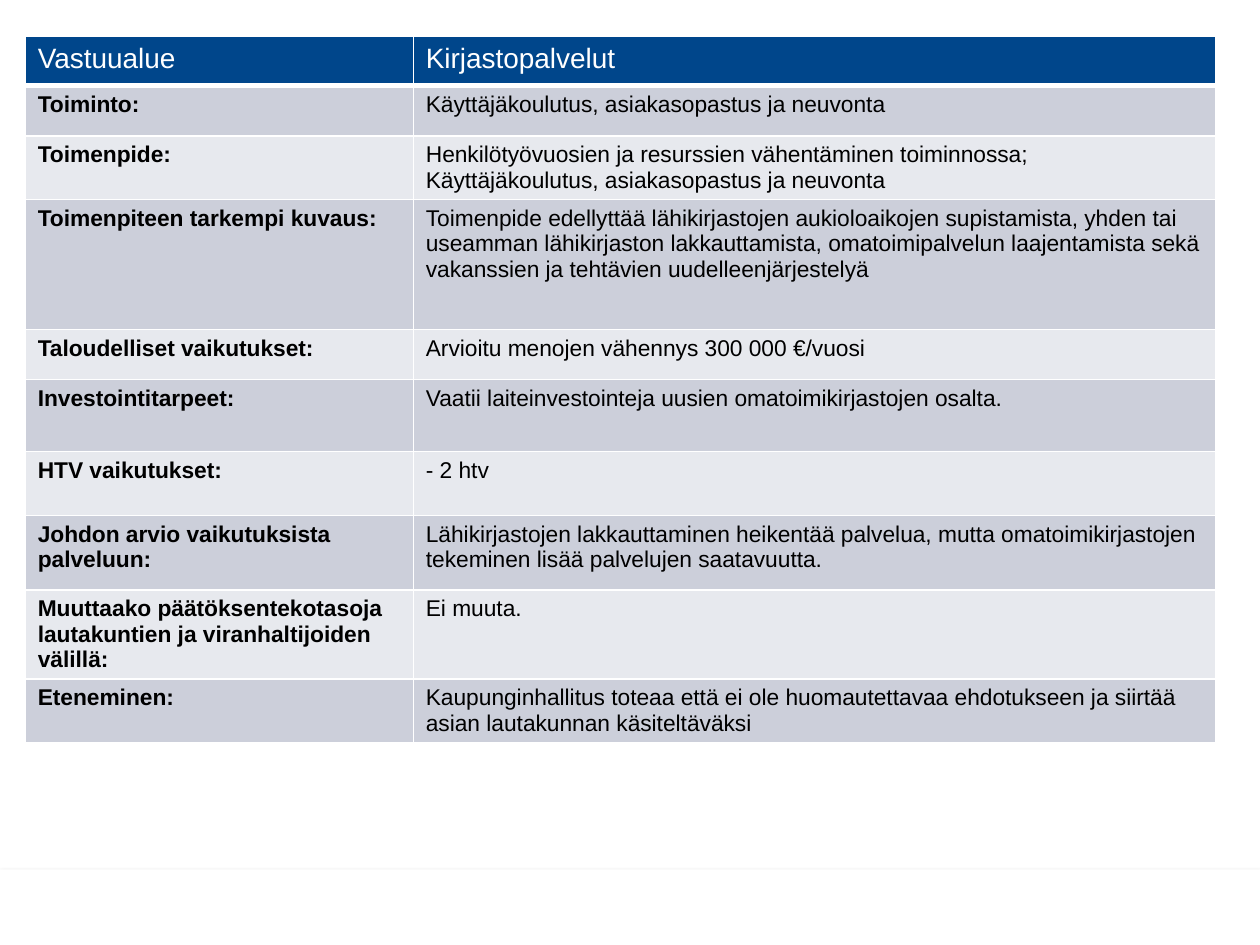
from lxml.etree import SubElement
from pptx import Presentation
from pptx.dml.color import RGBColor
from pptx.enum.shapes import MSO_SHAPE
from pptx.oxml.ns import qn
from pptx.util import Inches, Pt

HEADER = ("Vastuualue", "Kirjastopalvelut")
# Label, description, row height in inches
ROWS = [
    ("Toiminto:", "Käyttäjäkoulutus, asiakasopastus ja neuvonta", 0.4),
    ("Toimenpide:", "Henkilötyövuosien ja resurssien vähentäminen toiminnossa; "
     "Käyttäjäkoulutus, asiakasopastus ja neuvonta", 0.5),
    ("Toimenpiteen tarkempi kuvaus:",
     "Toimenpide edellyttää lähikirjastojen aukioloaikojen supistamista, yhden tai "
     "useamman lähikirjaston lakkauttamista, omatoimipalvelun laajentamista sekä "
     "vakanssien ja tehtävien uudelleenjärjestelyä", 1.03),
    ("Taloudelliset vaikutukset:", "Arvioitu menojen vähennys 300 000 €/vuosi", 0.4),
    ("Investointitarpeet:",
     "Vaatii laiteinvestointeja uusien omatoimikirjastojen osalta.", 0.57),
    ("HTV vaikutukset:", "- 2 htv", 0.51),
    ("Johdon arvio vaikutuksista palveluun:",
     "Lähikirjastojen lakkauttaminen heikentää palvelua, mutta omatoimikirjastojen "
     "tekeminen lisää palvelujen saatavuutta.", 0.59),
    ("Muuttaako päätöksentekotasoja lautakuntien ja viranhaltijoiden välillä:",
     "Ei muuta.", 0.7),
    ("Eteneminen:",
     "Kaupunginhallitus toteaa että ei ole huomautettavaa ehdotukseen ja siirtää "
     "asian lautakunnan käsiteltäväksi", 0.5),
]
COLUMN_WIDTHS = (3.08, 6.37)
HEADER_HEIGHT = 0.39
WHITE, BLACK, BLUE = "FFFFFF", "000000", "00468B"
BANDS = ("CCCFDA", "E7E9EE")


def paint(fill, color):
    fill.solid()
    fill.fore_color.rgb = RGBColor.from_string(color)


def add_borders(cell, bottom_width):
    properties = cell._tc.get_or_add_tcPr()
    widths = {"a:lnL": 1, "a:lnR": 1, "a:lnT": 1, "a:lnB": bottom_width}
    for index, (tag, width) in enumerate(widths.items()):
        line = SubElement(properties, qn(tag), w=str(Pt(width)))
        solid = SubElement(line, qn("a:solidFill"))
        SubElement(solid, qn("a:srgbClr"), val=WHITE)
        properties.insert(index, line)


def fill_cell(cell, text, size, color, background, bold=False, bottom_width=1):
    paint(cell.fill, background)
    add_borders(cell, bottom_width)
    span = cell.text_frame.paragraphs[0].add_run()
    span.text = text
    span.font.name = "Arial"
    span.font.size = Pt(size)
    span.font.bold = bold
    paint(span.font.fill, color)


deck = Presentation()
deck.slide_width, deck.slide_height = Inches(10), Inches(7.5)
page = deck.slides.add_slide(deck.slide_layouts[6])

# Footer band with a soft shadow
footer = page.shapes.add_shape(
    MSO_SHAPE.RECTANGLE, 0, Inches(6.9), Inches(10), Inches(0.6))
paint(footer.fill, WHITE)
footer.line.fill.background()
footer.shadow.inherit = False
effects = footer._element.spPr.find(qn("a:effectLst"))
shadow = SubElement(effects, qn("a:outerShdw"), blurRad=str(Pt(3.1)),
                    dist=str(Pt(1.8)), dir="5400000", rotWithShape="0")
shade = SubElement(shadow, qn("a:srgbClr"), val=BLACK)
SubElement(shade, qn("a:alpha"), val="35000")

# Table
heights = [HEADER_HEIGHT] + [height for _, _, height in ROWS]
table = page.shapes.add_table(
    len(heights), len(COLUMN_WIDTHS), Inches(0.2), Inches(0.29),
    Inches(sum(COLUMN_WIDTHS)), Inches(sum(heights))).table
for column, width in zip(table.columns, COLUMN_WIDTHS):
    column.width = Inches(width)
for row, height in zip(table.rows, heights):
    row.height = Inches(height)

for column, title in enumerate(HEADER):
    fill_cell(table.cell(0, column), title, 16, WHITE, BLUE, bottom_width=3)
for number, (label, description, _) in enumerate(ROWS):
    band = BANDS[number % 2]
    fill_cell(table.cell(number + 1, 0), label, 13, BLACK, band, bold=True)
    fill_cell(table.cell(number + 1, 1), description, 13, BLACK, band)

deck.save("out.pptx")
